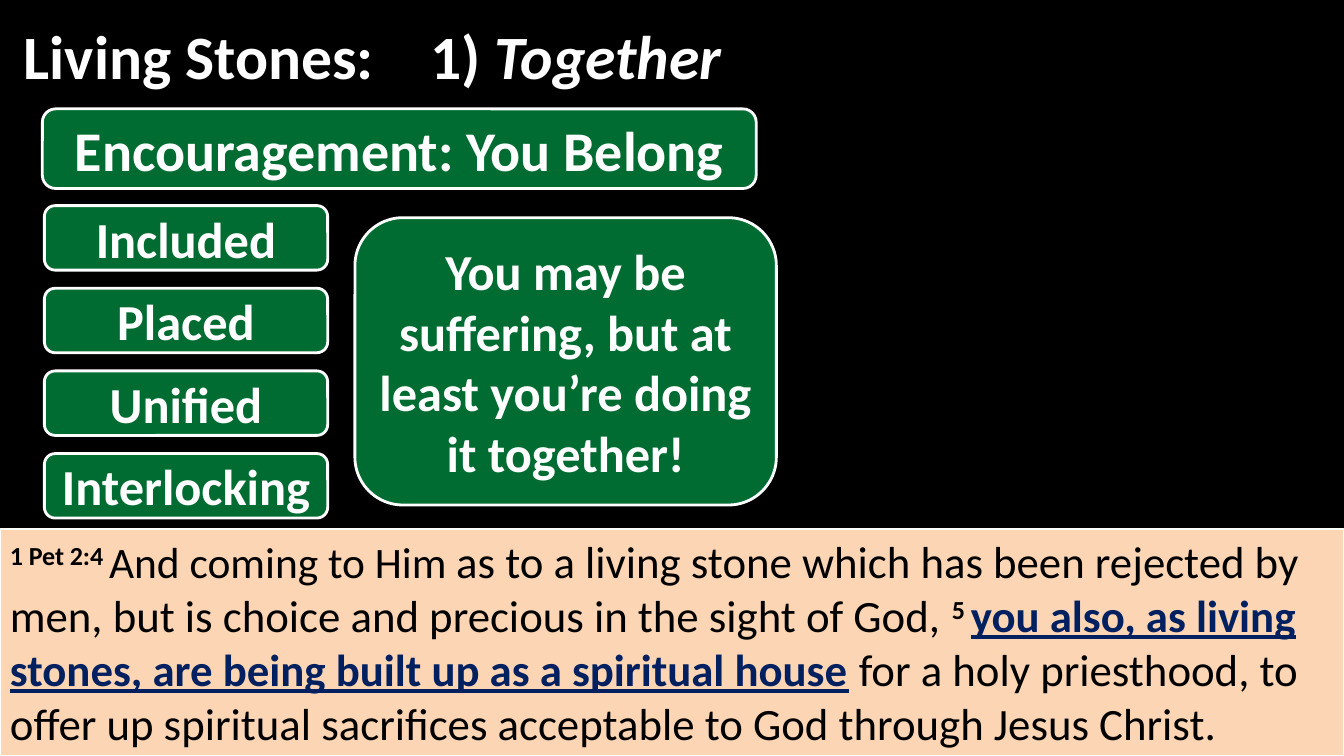
from pptx import Presentation
from pptx.dml.color import RGBColor
from pptx.enum.shapes import MSO_SHAPE
from pptx.enum.text import MSO_ANCHOR, MSO_AUTO_SIZE, PP_ALIGN
from pptx.util import Inches, Pt

RECT, ROUNDED = MSO_SHAPE.RECTANGLE, MSO_SHAPE.ROUNDED_RECTANGLE
LEFT, CENTER = PP_ALIGN.LEFT, PP_ALIGN.CENTER
TOP, MIDDLE = MSO_ANCHOR.TOP, MSO_ANCHOR.MIDDLE
NO_FIT = MSO_AUTO_SIZE.NONE

BLACK = RGBColor(0x00, 0x00, 0x00)
WHITE = RGBColor(0xFF, 0xFF, 0xFF)
GREEN = RGBColor(0x00, 0x6C, 0x31)
PEACH = RGBColor(0xFC, 0xD5, 0xB5)
NAVY = RGBColor(0x00, 0x20, 0x60)

HEADING = {"size": Pt(44), "bold": True}
VERSE = {"size": Pt(32), "bold": False}
VERSE_NUMBER = {"size": Pt(32), "bold": True}
KEY_PHRASE = {"size": Pt(32), "bold": True, "underline": True}

BELONGING = ["Included", "Placed", "Unified", "Interlocking"]
BELONGING_TOP, BELONGING_STEP = 2.04, 0.82


def add_run(p, text, color, formats, superscript=False):
    r = p.add_run()
    r.text = text
    r.font.name = "Calibri"
    r.font.color.rgb = color
    for name, value in formats.items():
        setattr(r.font, name, value)
    if superscript:
        r._r.get_or_add_rPr().set("baseline", "30000")


def set_frame(sp, align, anchor):
    """Prepare the text frame and return its first paragraph."""
    tf = sp.text_frame
    formats = {"word_wrap": True, "auto_size": NO_FIT, "vertical_anchor": anchor}
    for name, value in formats.items():
        setattr(tf, name, value)
    p = tf.paragraphs[0]
    p.alignment = align
    return p


def add_panel(s, kind, box, fill, line_width):
    sp = s.shapes.add_shape(kind, *map(Inches, box))
    sp.shadow.inherit = False
    sp.fill.solid()
    sp.fill.fore_color.rgb = fill
    sp.line.color.rgb = WHITE
    sp.line.width = Pt(line_width)
    return sp


def add_green_box(s, box, text, size):
    sp = add_panel(s, ROUNDED, box, GREEN, 2)
    p = set_frame(sp, CENTER, MIDDLE)
    add_run(p, text, WHITE, {"size": Pt(size), "bold": True})


def add_headings(s):
    title = s.shapes.title
    title.left, title.top = Inches(-0.04), Inches(0.17)
    title.width, title.height = Inches(4.17), Inches(0.75)
    p = set_frame(title, CENTER, MIDDLE)
    p.line_spacing = 1.0
    add_run(p, "Living Stones: ", WHITE, HEADING)

    point = s.shapes.add_textbox(*map(Inches, (4.17, 0.17, 9.08, 0.75)))
    p = set_frame(point, LEFT, MIDDLE)
    add_run(p, "1) ", WHITE, HEADING)
    add_run(p, "Together", WHITE, {**HEADING, "italic": True})


def add_verse(s):
    sp = add_panel(s, RECT, (0, 5.25, 13.33, 2.25), PEACH, 1.5)
    p = set_frame(sp, LEFT, TOP)
    add_run(p, "1 Pet 2:4 ", BLACK, VERSE_NUMBER, superscript=True)
    add_run(p, "And coming to Him ", BLACK, {**VERSE, "size": Pt(31)})
    add_run(p, "as to a living stone which has been rejected by men, but is "
               "choice and precious in the sight of God, ", BLACK, VERSE)
    add_run(p, "5 ", BLACK, VERSE_NUMBER, superscript=True)
    add_run(p, "you also, as living stones, are being built up as a "
               "spiritual house", NAVY, KEY_PHRASE)
    add_run(p, " for a holy priesthood, to offer up spiritual sacrifices "
               "acceptable to God through Jesus Christ.", BLACK, VERSE)


def main():
    prs = Presentation()
    prs.slide_width, prs.slide_height = Inches(13.33), Inches(7.5)
    title_only = prs.slide_layouts[5]
    s = prs.slides.add_slide(title_only)
    s.background.fill.solid()
    s.background.fill.fore_color.rgb = BLACK

    add_headings(s)
    add_verse(s)
    add_green_box(s, (0.42, 1.08, 7.08, 0.79), "Encouragement: You Belong", 40)
    for i, word in enumerate(BELONGING):
        top = BELONGING_TOP + i * BELONGING_STEP
        add_green_box(s, (0.44, top, 2.81, 0.64), word, 36)
    add_green_box(s, (3.52, 2.16, 4.18, 2.85),
                  "You may be suffering, but at least you’re doing it together!", 36)
    prs.save("out.pptx")


if __name__ == "__main__":
    main()
